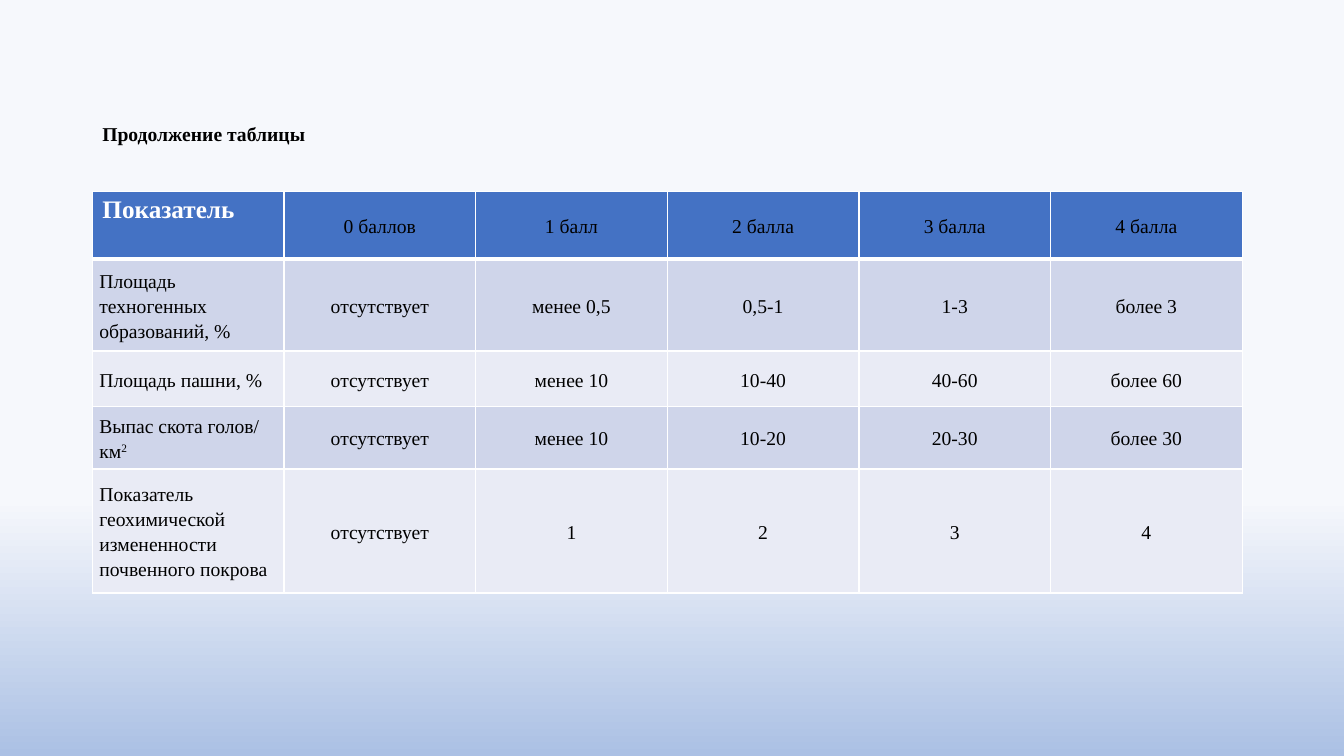
from lxml.etree import SubElement
from pptx import Presentation
from pptx.dml.color import RGBColor
from pptx.enum.text import MSO_ANCHOR, PP_ALIGN
from pptx.oxml.ns import qn
from pptx.util import Pt

TITLE = "Продолжение таблицы"
HEADER = ["Показатель", "0 баллов", "1 балл", "2 балла", "3 балла", "4 балла"]
INDICATORS = [
    ["Площадь техногенных образований, %", "отсутствует", "менее 0,5", "0,5-1", "1-3", "более 3"],
    ["Площадь пашни, %", "отсутствует", "менее 10", "10-40", "40-60", "более 60"],
    ["Выпас скота голов/ км", "отсутствует", "менее 10", "10-20", "20-30", "более 30"],
    ["Показатель геохимической измененности почвенного покрова", "отсутствует", "1", "2", "3", "4"],
]
SUPERSCRIPTS = {(3, 0): "2"}
ROW_HEIGHTS = [48.2, 66, 39.6, 44.6, 88.6]
COLUMN_WIDTH = 136.9
LEFT, TABLE_TOP = 66, 136.6
FONT = "Times New Roman"
BLACK, WHITE, BLUE = "000000", "FFFFFF", "4472C4"
BAND_FILLS = ["CFD5EA", "E9EBF5"]
BACKGROUND_STOPS = [(0.66, "F6F8FC"), (1, "ABC0E4")]


def color(value):
    return RGBColor.from_string(value)


def format_run(run, size=14, fill=BLACK, bold=False):
    run.font.name = FONT
    run.font.size = Pt(size)
    run.font.bold = bold
    run.font.color.rgb = color(fill)


def add_borders(cell, top, bottom):
    properties = cell._tc.get_or_add_tcPr()
    for side, width in (("L", 1), ("R", 1), ("T", top), ("B", bottom)):
        line = SubElement(properties, qn(f"a:ln{side}"), w=str(Pt(width)))
        solid = SubElement(line, qn("a:solidFill"))
        SubElement(solid, qn("a:srgbClr"), val=WHITE)


def fill_cell(cell, text, row, column):
    add_borders(cell, 3 if row == 1 else 1, 3 if row == 0 else 1)
    cell.fill.solid()
    cell.fill.fore_color.rgb = color(BAND_FILLS[(row - 1) % 2] if row else BLUE)
    paragraph = cell.text_frame.paragraphs[0]
    paragraph.text = text
    if row == column == 0:
        format_run(paragraph.runs[0], 18, WHITE, True)
        return
    cell.vertical_anchor = MSO_ANCHOR.MIDDLE
    cell.margin_left = cell.margin_right = Pt(5)
    cell.margin_top = cell.margin_bottom = 0
    paragraph.line_spacing = 1.15
    paragraph.alignment = PP_ALIGN.CENTER if column else PP_ALIGN.LEFT
    format_run(paragraph.runs[0])
    if (row, column) in SUPERSCRIPTS:
        superscript = paragraph.add_run()
        superscript.text = SUPERSCRIPTS[row, column]
        format_run(superscript)
        superscript.font._element.set("baseline", "30000")


def add_title(slide):
    text_frame = slide.shapes.add_textbox(Pt(LEFT), Pt(38.2), Pt(828), Pt(116.6)).text_frame
    text_frame.word_wrap = True
    text_frame.vertical_anchor = MSO_ANCHOR.MIDDLE
    paragraph = text_frame.paragraphs[0]
    paragraph.text = TITLE
    paragraph.alignment = PP_ALIGN.JUSTIFY
    paragraph.line_spacing = 0.9
    format_run(paragraph.runs[0], bold=True)


def add_indicator_table(slide):
    rows = [HEADER] + INDICATORS
    table = slide.shapes.add_table(
        len(rows), len(HEADER), Pt(LEFT), Pt(TABLE_TOP),
        Pt(COLUMN_WIDTH * len(HEADER)), Pt(sum(ROW_HEIGHTS)),
    ).table
    for column in table.columns:
        column.width = Pt(COLUMN_WIDTH)
    for row, (height, texts) in enumerate(zip(ROW_HEIGHTS, rows)):
        table.rows[row].height = Pt(height)
        for column, text in enumerate(texts):
            fill_cell(table.cell(row, column), text, row, column)


def main():
    presentation = Presentation()
    presentation.slide_width, presentation.slide_height = Pt(960), Pt(540)
    slide = presentation.slides.add_slide(presentation.slide_layouts[6])
    background = slide.background.fill
    background.gradient()
    background.gradient_angle = 270
    for stop, (position, value) in zip(background.gradient_stops, BACKGROUND_STOPS):
        stop.position = position
        stop.color.rgb = color(value)
    add_title(slide)
    add_indicator_table(slide)
    presentation.save("out.pptx")


if __name__ == "__main__":
    main()
